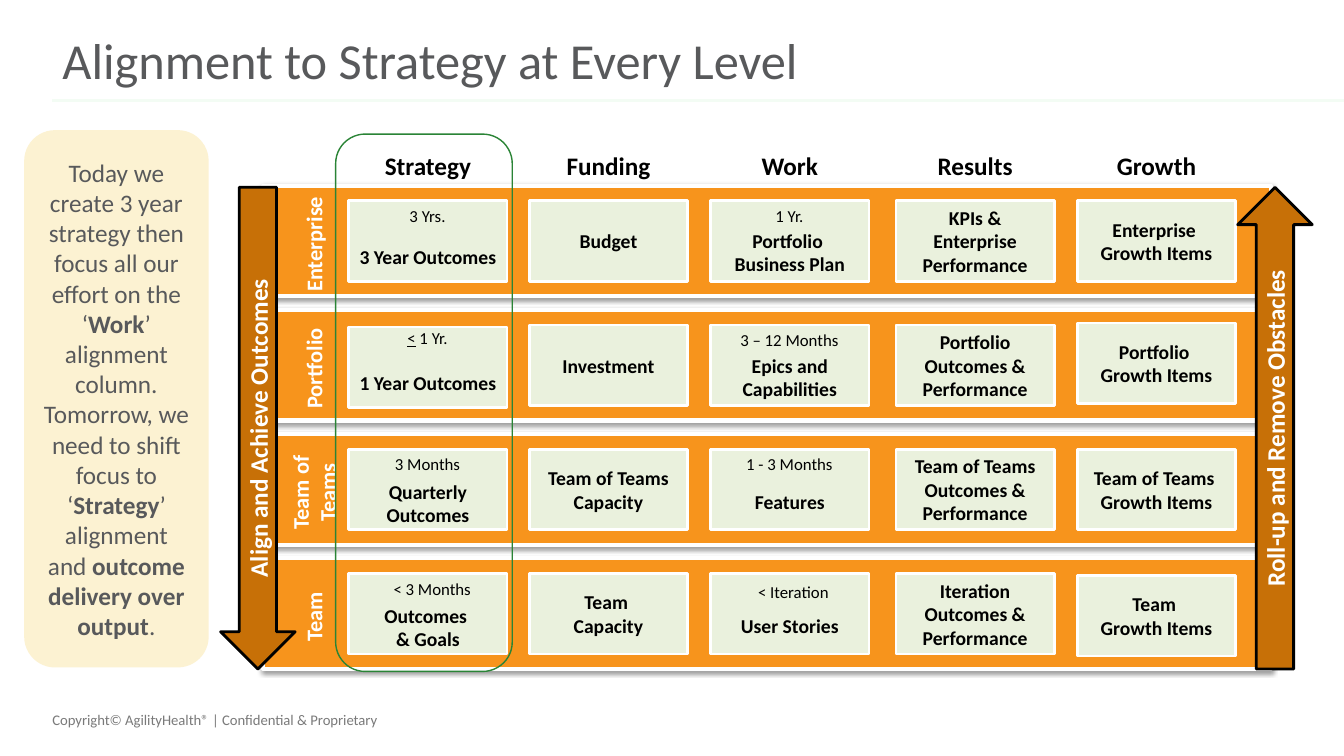
"""Build the strategy alignment slide: four organisation levels by five columns."""
from dataclasses import dataclass

from lxml import etree
from pptx import Presentation
from pptx import util as u
from pptx.dml import color
from pptx.enum import shapes, text
from pptx.oxml import ns

FONT = "Calibri"
BLACK, WHITE, GREY = "000000", "FFFFFF", "58595B"
ORANGE, BROWN, MINT, CREAM, GREEN = "F7941C", "C77007", "EAF1DD", "FCF2D2", "2A8436"
BAND_LEFT, BAND_TOP, BAND_W, BAND_H, BAND_PITCH = 6.63, 4.68, 25.4, 2.79, 3.13
CARD_W, CARD_H, CARD_INSET = 3.99, 2.03, 0.38
NOTE_W, NOTE_H = 3.05, 0.76
ARROW_TOP, ARROW_W, ARROW_H = 4.72, 1.88, 12.14
COLUMNS = [("Strategy", 8.79), ("Funding", 13.34), ("Work", 17.91),
           ("Results", 22.58), ("Growth", 27.15)]


@dataclass
class Run:
    text: str
    bold: bool = False
    underline: bool = False


@dataclass
class Box:
    left: float
    top: float
    width: float
    height: float


@dataclass
class Note:
    runs: list[Run]
    dx: float = 0.46
    dy: float = 0


@dataclass
class Card:
    text: str
    dy: float = 0
    note: Note | None = None
    note_room: float = 0


@dataclass
class Level:
    name: str
    label_w: float
    cards: list[Card]


@dataclass
class Arrow:
    label: str
    left: float
    rotation: int


LEVELS = [
    Level("Enterprise", 3.05, [
        Card("3 Year Outcomes", 0, Note([Run("3 Yrs.")]), 0.77),
        Card("Budget"),
        Card("Portfolio \nBusiness Plan", 0, Note([Run("1 Yr.")]), 0.57),
        Card("KPIs & Enterprise Performance"),
        Card("Enterprise \nGrowth Items")]),
    Level("Portfolio", 2.69, [
        Card("1 Year Outcomes", 0.05, Note([Run("<", underline=True), Run(" 1 Yr.")], dy=-0.1), 0.77),
        Card("Investment"),
        Card("Epics and Capabilities", 0, Note([Run("3 – 12 Months")]), 0.6),
        Card("Portfolio Outcomes & Performance"),
        Card("Portfolio \nGrowth Items", -0.05)]),
    Level("Team of Teams", 2.62, [
        Card("Quarterly Outcomes", 0, Note([Run("3 Months")]), 0.68),
        Card("Team of Teams Capacity"),
        Card("Features", 0, Note([Run("1 - 3 Months")]), 0.6),
        Card("Team of Teams Outcomes & Performance"),
        Card("Team of Teams \nGrowth Items")]),
    Level("Team", 2.21, [
        Card("Outcomes \n& Goals", 0, Note([Run("< 3 Months")], 0.58), 0.68),
        Card("Team \nCapacity"),
        Card("User Stories", 0, Note([Run("< Iteration")], 0.56, 0.08), 0.6),
        Card("Iteration Outcomes & Performance"),
        Card("Team \nGrowth Items", 0.05)]),
]
ARROWS = [Arrow("Roll-up and Remove Obstacles", 31.19, 180),
          Arrow("Align and Achieve Outcomes", 5.56, 0)]
SIDE_NOTE = [
    Run("Today we create 3 year strategy then focus all our effort on the ‘"),
    Run("Work", True),
    Run("’ alignment column. Tomorrow, we need to shift focus to ‘"),
    Run("Strategy", True),
    Run("’ alignment and "),
    Run("outcome delivery over output", True),
    Run(".")]


def rgb(value: str) -> color.RGBColor:
    return color.RGBColor.from_string(value)


def place(box: Box) -> tuple:
    return tuple(u.Cm(v) for v in (box.left, box.top, box.width, box.height))


def write(sp, paragraphs: list[list[Run]], size: float, ink: str,
          align=text.PP_ALIGN.CENTER, anchor=text.MSO_ANCHOR.MIDDLE) -> None:
    tf = sp.text_frame
    tf.word_wrap = True
    tf.vertical_anchor = anchor
    for i, runs in enumerate(paragraphs):
        p = tf.add_paragraph() if i else tf.paragraphs[0]
        p.alignment = align
        for run in runs:
            r = p.add_run()
            r.text = run.text
            r.font.name, r.font.size = FONT, u.Pt(size)
            r.font.bold, r.font.underline = run.bold, run.underline
            r.font.color.rgb = rgb(ink)


def add_shape(s, kind, box: Box, fill: str | None, line: str | None = None, width: float = 0):
    sp = s.shapes.add_shape(kind, *place(box))
    sp.shadow.inherit = False
    if fill:
        sp.fill.solid()
        sp.fill.fore_color.rgb = rgb(fill)
    else:
        sp.fill.background()
    if line:
        sp.line.color.rgb = rgb(line)
        sp.line.width = u.Pt(width)
    else:
        sp.line.fill.background()
    return sp


def add_label(s, box: Box, runs: list[Run], size: float, ink: str = BLACK, rotation: int = 0,
              align=text.PP_ALIGN.CENTER) -> None:
    sp = s.shapes.add_textbox(*place(box))
    sp.rotation = rotation
    write(sp, [runs], size, ink, align)


def add_vertical_label(s, cx: float, cy: float, length: float, height: float,
                       label: str, size: float) -> None:
    box = Box(cx - length / 2, cy - height / 2, length, height)
    add_label(s, box, [Run(label, True)], size, WHITE, 270)


def add_band(s, top: float) -> None:
    sp = add_shape(s, shapes.MSO_SHAPE.RECTANGLE, Box(BAND_LEFT, top, BAND_W, BAND_H),
                   ORANGE, WHITE, 3)
    effects = sp._element.spPr.find(ns.qn("a:effectLst"))
    shadow = etree.SubElement(effects, ns.qn("a:outerShdw"), blurRad=str(u.Pt(3.1)),
                              dist=str(u.Pt(1.6)), dir="5400000", rotWithShape="0")
    ink = etree.SubElement(shadow, ns.qn("a:srgbClr"), val=BLACK)
    etree.SubElement(ink, ns.qn("a:alpha"), val="38000")


def add_card(s, card: Card, left: float, band_top: float) -> None:
    top = band_top + CARD_INSET + card.dy
    sp = add_shape(s, shapes.MSO_SHAPE.RECTANGLE, Box(left, top, CARD_W, CARD_H), MINT, WHITE, 2)
    if card.note:
        sp.text_frame.margin_top = u.Cm(card.note_room + 0.05)
        sp.text_frame.margin_bottom = u.Cm(0.05)
    write(sp, [[Run(part, True)] for part in card.text.split("\n")], 14, BLACK)
    if card.note:
        box = Box(left + card.note.dx, top + card.note.dy, NOTE_W, NOTE_H)
        add_label(s, box, card.note.runs, 12)


def add_heading(s) -> None:
    title = s.shapes.title
    title.left, title.top, title.width, title.height = place(Box(1.32, 0.69, 31.22, 1.78))
    write(title, [[Run("Alignment to Strategy at Every Level")]], 36, GREY, text.PP_ALIGN.LEFT)
    title.text_frame.paragraphs[0].line_spacing = 0.9
    rule = s.shapes.add_connector(shapes.MSO_CONNECTOR.STRAIGHT, u.Cm(1.32), u.Cm(2.54),
                                  u.Cm(33.87), u.Cm(2.54))
    rule.line.color.rgb = rgb("F3FCF4")
    rule.line.width = u.Pt(2)
    etree.SubElement(rule._element.spPr, ns.qn("a:effectLst"))
    add_label(s, Box(1.07, 17.78, 11.43, 0.71),
              [Run("Copyright© AgilityHealth® | Confidential & Proprietary")],
              10.5, "7A7A7A", align=text.PP_ALIGN.LEFT)


def main() -> None:
    prs = Presentation()
    prs.slide_width, prs.slide_height = u.Cm(33.87), u.Cm(19.05)
    s = prs.slides.add_slide(prs.slide_layouts[5])
    add_heading(s)
    for i, level in enumerate(LEVELS):
        top = BAND_TOP + i * BAND_PITCH
        add_band(s, top)
        add_vertical_label(s, 7.9, top + BAND_H / 2 + 0.08, level.label_w, 1.63, level.name, 16)
        for card, (_, left) in zip(level.cards, COLUMNS):
            add_card(s, card, left, top)
    for name, left in COLUMNS:
        add_label(s, Box(left, 3.66, CARD_W, 1.02), [Run(name, True)], 18)
    for arrow in ARROWS:
        sp = add_shape(s, shapes.MSO_SHAPE.DOWN_ARROW,
                       Box(arrow.left, ARROW_TOP, ARROW_W, ARROW_H), BROWN, BLACK, 2)
        sp.rotation = arrow.rotation
        add_vertical_label(s, arrow.left + ARROW_W / 2, ARROW_TOP + ARROW_H / 2,
                           ARROW_H, 1.02, arrow.label, 18)
    side = add_shape(s, shapes.MSO_SHAPE.ROUNDED_RECTANGLE, Box(0.61, 3.28, 4.65, 13.54), CREAM)
    write(side, [SIDE_NOTE], 18, GREY)
    add_shape(s, shapes.MSO_SHAPE.ROUNDED_RECTANGLE, Box(8.46, 3.38, 4.45, 13.54), None, GREEN, 1)
    prs.save("out.pptx")


if __name__ == "__main__":
    main()
